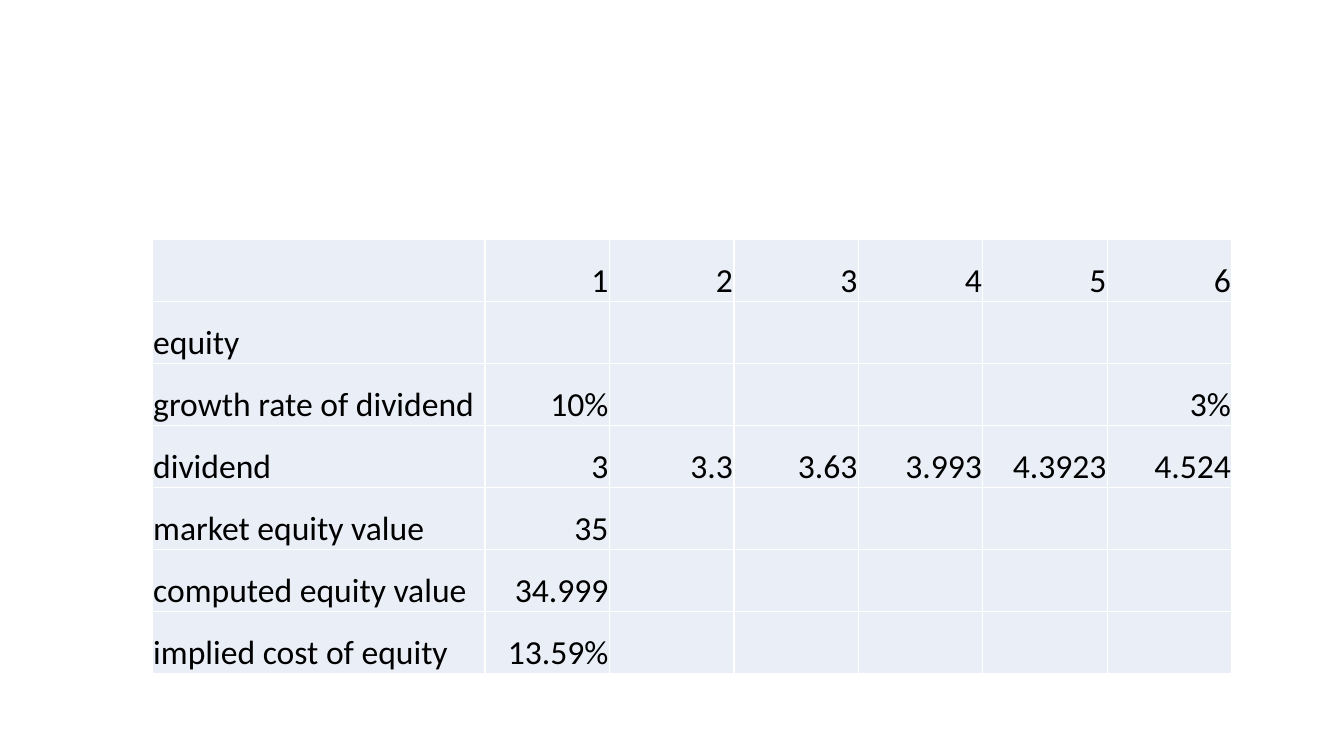
"""Build a slide with a dividend table and the implied cost of equity."""
from lxml import etree
from pptx import Presentation
from pptx import util as u
from pptx.dml.color import RGBColor
from pptx.enum import text
from pptx.oxml import ns

COLORS = {"cell": "EAEFF7", "border": "FFFFFF", "text": "000000"}
ROWS = [
    ["", "1", "2", "3", "4", "5", "6"],
    ["equity"],
    ["growth rate of dividend", "10%", "", "", "", "", "3%"],
    ["dividend", "3", "3.3", "3.63", "3.993", "4.3923", "4.524"],
    ["market equity value", "35"],
    ["computed equity value", "34.999"],
    ["implied cost of equity", "13.59%"],
]
LEFT, TOP, WIDTH, HEIGHT = 1.51, 2.38, 10.71, 4.3
LABEL_WIDTH = 3.3
COLUMNS = len(ROWS[0])
YEAR_WIDTH = (WIDTH - LABEL_WIDTH) / (COLUMNS - 1)


def add_borders(cell):
    """Draw a thin line on every side of a cell."""
    properties = cell._tc.get_or_add_tcPr()
    for side in ("lnL", "lnR", "lnT", "lnB"):
        line = etree.SubElement(properties, ns.qn(f"a:{side}"), w=str(u.Pt(1)))
        fill = etree.SubElement(line, ns.qn("a:solidFill"))
        etree.SubElement(fill, ns.qn("a:srgbClr"), val=COLORS["border"])


deck = Presentation()
deck.slide_width, deck.slide_height = u.Inches(13.33), u.Inches(7.5)
page = deck.slides.add_slide(deck.slide_layouts[6])

frame = page.shapes.add_table(
    len(ROWS), COLUMNS, u.Inches(LEFT), u.Inches(TOP), u.Inches(WIDTH), u.Inches(HEIGHT)
)
table = frame.table
table.first_row = table.horz_banding = False
for index, column in enumerate(table.columns):
    column.width = u.Inches(YEAR_WIDTH if index else LABEL_WIDTH)

for row_index, values in enumerate(ROWS):
    for column_index in range(COLUMNS):
        cell = table.cell(row_index, column_index)
        add_borders(cell)
        cell.fill.solid()
        cell.fill.fore_color.rgb = RGBColor.from_string(COLORS["cell"])
        cell.vertical_anchor = text.MSO_ANCHOR.BOTTOM
        cell.margin_left = cell.margin_right = cell.margin_top = u.Inches(0.01)
        cell.margin_bottom = 0
        if column_index < len(values) and values[column_index]:
            para = cell.text_frame.paragraphs[0]
            para.text = values[column_index]
            para.alignment = text.PP_ALIGN.RIGHT if column_index else text.PP_ALIGN.LEFT
            para.font.name, para.font.size = "Calibri", u.Pt(24)
            para.font.color.rgb = RGBColor.from_string(COLORS["text"])

deck.save("out.pptx")
